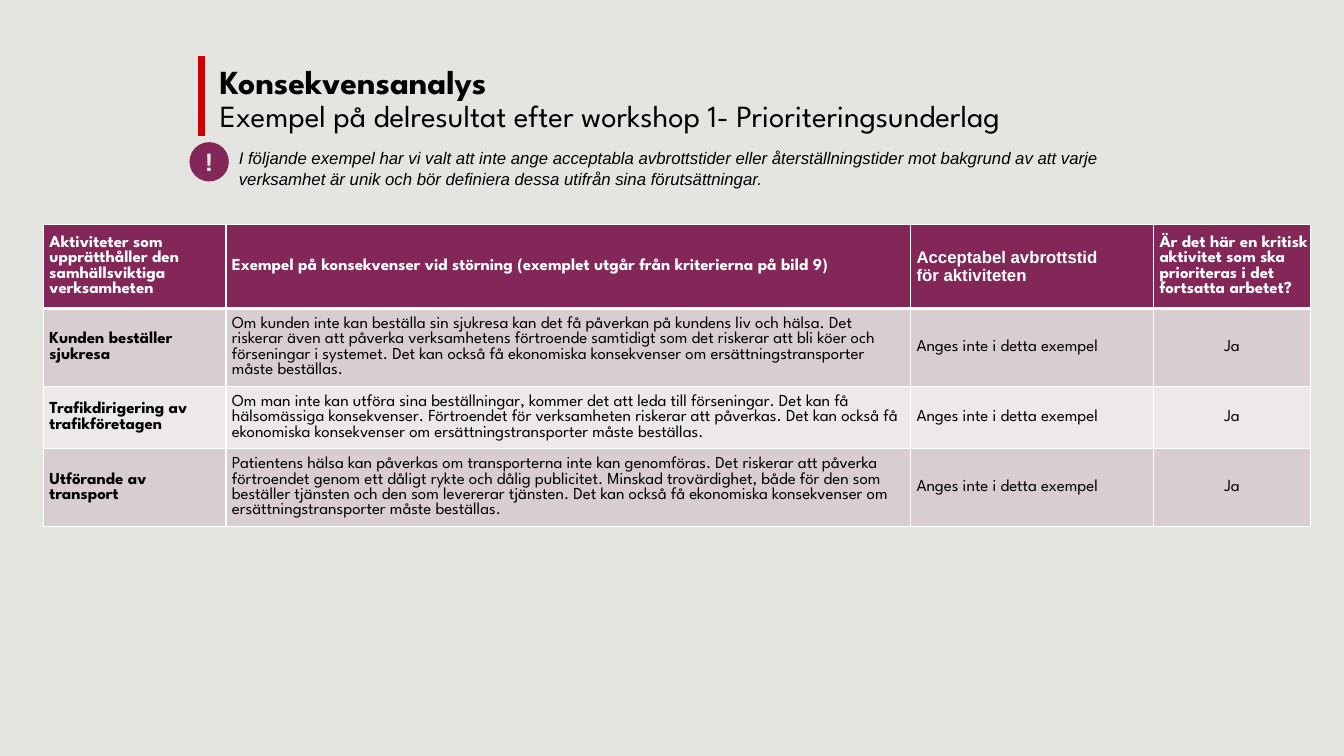
from dataclasses import dataclass

import pptx
import pptx.dml.color
import pptx.enum.shapes
import pptx.enum.text
import pptx.oxml
import pptx.oxml.ns
import pptx.util
from lxml import etree

ANCHOR = pptx.enum.text.MSO_ANCHOR
ALIGN = pptx.enum.text.PP_ALIGN
WIDTH = pptx.util.Inches(13.33)
HEIGHT = pptx.util.Inches(7.5)


@dataclass(frozen=True)
class Theme:
    page: str = "E4E4E1"
    plum: str = "822757"
    red: str = "CC0000"
    ink: str = "000000"
    white: str = "FFFFFF"
    pale: str = "E7E6E6"
    bands: tuple = ("D8CDD1", "EDE8EA")
    display: str = "League Spartan"
    plain: str = "Arial"
    title: int = 24
    subtitle: int = 22
    icon: int = 18
    body: int = 12


THEME = Theme()
COLUMNS = (13.58, 50.94, 18.08, 11.7)
HEADER_ROW, BODY_ROW = 11.07, 7.33
HEADERS = (
    "Aktiviteter som upprätthåller den samhällsviktiga verksamheten",
    "Exempel på konsekvenser vid störning (exemplet utgår från kriterierna på bild 9)",
    "Acceptabel avbrottstid\vför aktiviteten",
    "Är det här en kritisk aktivitet som ska prioriteras i det fortsatta arbetet?",
)
ACTIVITIES = (
    ("Kunden beställer sjukresa",
     "Om kunden inte kan beställa sin sjukresa kan det få påverkan på kundens liv och hälsa. "
     "Det riskerar även att påverka verksamhetens förtroende samtidigt som det riskerar att bli "
     "köer och förseningar i systemet. Det kan också få ekonomiska konsekvenser om "
     "ersättningstransporter måste beställas."),
    ("Trafikdirigering av trafikföretagen",
     "Om man inte kan utföra sina beställningar, kommer det att leda till förseningar. Det kan få "
     "hälsomässiga konsekvenser. Förtroendet för verksamheten riskerar att påverkas. Det kan också "
     "få ekonomiska konsekvenser om ersättningstransporter måste beställas."),
    ("Utförande av transport",
     "Patientens hälsa kan påverkas om transporterna inte kan genomföras. Det riskerar att påverka "
     "förtroendet genom ett dåligt rykte och dålig publicitet. Minskad trovärdighet, både för den "
     "som beställer tjänsten och den som levererar tjänsten. Det kan också få ekonomiska "
     "konsekvenser om ersättningstransporter måste beställas."),
)
INTERRUPTION, CRITICAL = "Anges inte i detta exempel", "Ja"


def across(percent):
    return round(WIDTH * percent / 100)


def down(percent):
    return round(HEIGHT * percent / 100)


def area(left, top, width, height):
    return across(left), down(top), across(width), down(height)


def rgb(value):
    return pptx.dml.color.RGBColor.from_string(value)


def style(font, size, color, name, bold=False, italic=False):
    font.size = pptx.util.Pt(size)
    font.color.rgb = rgb(color)
    font.name = name
    font.bold = bold
    font.italic = italic


def fill(target, color):
    target.fill.solid()
    target.fill.fore_color.rgb = rgb(color)


def set_margins(target, left, top, right, bottom):
    target.margin_left = pptx.util.Inches(left)
    target.margin_top = pptx.util.Inches(top)
    target.margin_right = pptx.util.Inches(right)
    target.margin_bottom = pptx.util.Inches(bottom)


def add_title(page, heading, subheading):
    box = page.shapes.title
    box.left, box.top, box.width, box.height = area(15.6, 7.87, 81.85, 10.67)
    frame = box.text_frame
    frame.word_wrap = True
    frame.auto_size = pptx.enum.text.MSO_AUTO_SIZE.NONE
    frame.vertical_anchor = ANCHOR.MIDDLE
    para = frame.paragraphs[0]
    para.alignment = ALIGN.LEFT
    para.line_spacing = 0.9
    span = para.add_run()
    span.text = heading
    style(span.font, THEME.title, THEME.ink, THEME.display, bold=True)
    para.add_line_break()
    span = para.add_run()
    span.text = subheading
    style(span.font, THEME.subtitle, THEME.ink, THEME.display)


def add_accent(page):
    line = page.shapes.add_connector(
        pptx.enum.shapes.MSO_CONNECTOR.STRAIGHT,
        across(15), down(7.47), across(15), down(18))
    line.line.color.rgb = rgb(THEME.red)
    line.line.width = pptx.util.Pt(5)
    etree.SubElement(line._element.spPr, pptx.oxml.ns.qn("a:effectLst"))


def add_note(page, text):
    frame = page.shapes.add_textbox(*area(17.03, 18.93, 68.27, 6.67)).text_frame
    frame.word_wrap = True
    para = frame.paragraphs[0]
    para.text = text
    para.space_after = pptx.util.Pt(12)
    style(para.font, THEME.body, THEME.ink, THEME.plain, italic=True)


def add_icon(page, text):
    circle = page.shapes.add_shape(
        pptx.enum.shapes.MSO_SHAPE.OVAL, *area(14.1, 18.8, 2.93, 5.2))
    circle.shadow.inherit = False
    fill(circle, THEME.plum)
    circle.line.fill.background()
    frame = circle.text_frame
    set_margins(frame, 0, 0, 0, 0)
    frame.vertical_anchor = ANCHOR.MIDDLE
    para = frame.paragraphs[0]
    para.text = text
    para.alignment = ALIGN.CENTER
    style(para.font, THEME.icon, THEME.pale, THEME.plain, bold=True)


def add_borders(cell, top, bottom):
    properties = cell._tc.get_or_add_tcPr()
    for place, (side, points) in enumerate((("L", 1), ("R", 1), ("T", top), ("B", bottom))):
        properties.insert(place, pptx.oxml.parse_xml(
            f'<a:ln{side} {pptx.oxml.ns.nsdecls("a")} w="{pptx.util.Pt(points)}">'
            f'<a:solidFill><a:srgbClr val="{THEME.white}"/></a:solidFill></a:ln{side}>'))


def fill_cell(cell, text, row, column):
    header = row == 0
    set_margins(cell, 0.06, *((0.04, 0, 0.04) if header else (0.08, 0.06, 0.08)))
    cell.vertical_anchor = ANCHOR.MIDDLE
    fill(cell, THEME.plum if header else THEME.bands[(row - 1) % 2])
    add_borders(cell, 3 if row == 1 else 1, 3 if header else 1)
    cell.text = text
    para = cell.text_frame.paragraphs[0]
    if not header and column == 3:
        para.alignment = ALIGN.CENTER
    style(para.font, THEME.body, THEME.white if header else THEME.ink,
          THEME.plain if header and column == 2 else THEME.display,
          bold=header or column == 0)


def add_activity_table(page):
    rows = [HEADERS] + [(*activity, INTERRUPTION, CRITICAL) for activity in ACTIVITIES]
    heights = [HEADER_ROW] + [BODY_ROW] * len(ACTIVITIES)
    table = page.shapes.add_table(
        len(rows), len(COLUMNS),
        *area(3.23, 29.73, sum(COLUMNS), sum(heights))).table
    for column, share in zip(table.columns, COLUMNS):
        column.width = across(share)
    for index, (texts, share) in enumerate(zip(rows, heights)):
        table.rows[index].height = down(share)
        for column, text in enumerate(texts):
            fill_cell(table.cell(index, column), text, index, column)


def main():
    deck = pptx.Presentation()
    deck.slide_width, deck.slide_height = WIDTH, HEIGHT
    page = deck.slides.add_slide(deck.slide_layouts[5])
    fill(page.background, THEME.page)
    add_activity_table(page)
    add_title(page, "Konsekvensanalys",
              "Exempel på delresultat efter workshop 1- Prioriteringsunderlag")
    add_accent(page)
    add_note(page, "I följande exempel har vi valt att inte ange acceptabla avbrottstider eller "
             "återställningstider mot bakgrund av att varje verksamhet är unik och bör definiera "
             "dessa utifrån sina förutsättningar.")
    add_icon(page, "!")
    deck.save("out.pptx")


if __name__ == "__main__":
    main()
